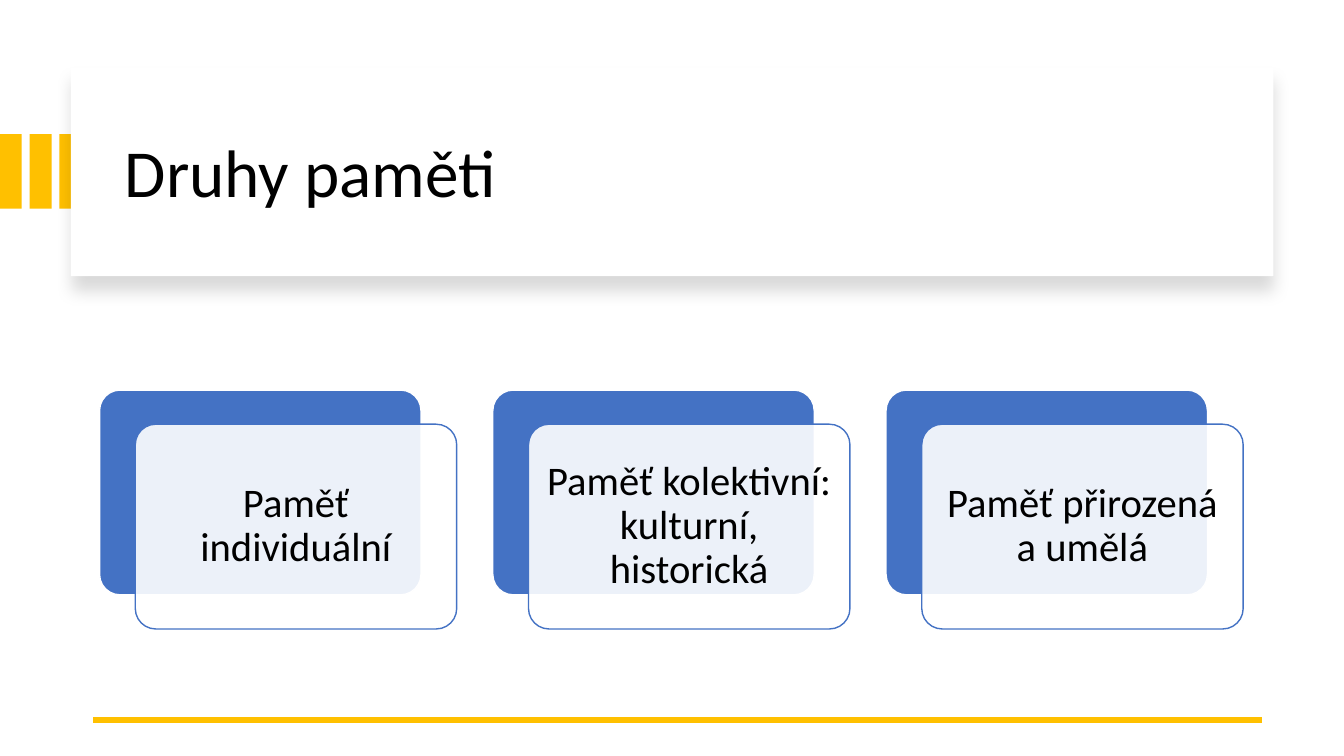
from lxml import etree
from pptx import Presentation
from pptx.dml.color import RGBColor
from pptx.enum.shapes import MSO_CONNECTOR, MSO_SHAPE
from pptx.enum.text import MSO_ANCHOR, PP_ALIGN
from pptx.oxml import parse_xml
from pptx.oxml.ns import nsdecls, qn
from pptx.util import Cm, Pt

RECTANGLE = MSO_SHAPE.RECTANGLE
ROUNDED = MSO_SHAPE.ROUNDED_RECTANGLE
STRAIGHT = MSO_CONNECTOR.STRAIGHT
MIDDLE = MSO_ANCHOR.MIDDLE
LEFT, CENTER = PP_ALIGN.LEFT, PP_ALIGN.CENTER

FONT = "Calibri"
COLORS = {"gold": "FFC000", "blue": "4472C4", "white": "FFFFFF", "black": "000000"}

TITLE = "Druhy paměti"
MEMORY_TYPES = [
    "Paměť individuální",
    "Paměť kolektivní: kulturní, historická",
    "Paměť přirozená a umělá",
]

STRIPE_PITCH = 0.75
CARD_LEFT, CARD_TOP, CARD_PITCH = 2.51, 9.83, 9.91
CARD_WIDTH, CARD_HEIGHT = 8.1, 5.16
FRONT_SHIFT_X, FRONT_SHIFT_Y = 0.9, 0.86


def color(name):
    return RGBColor.from_string(COLORS[name])


def add_block(page, kind, left, top, width, height, fill, line=None):
    block = page.shapes.add_shape(kind, Cm(left), Cm(top), Cm(width), Cm(height))
    block.shadow.inherit = False
    block.fill.solid()
    block.fill.fore_color.rgb = color(fill)
    if line:
        block.line.color.rgb = color(line)
        block.line.width = Pt(1)
    else:
        block.line.fill.background()
    if kind == ROUNDED:
        block.adjustments[0] = 0.1
    return block


def set_text(box, text, size, align):
    frame = box.text_frame
    frame.word_wrap = True
    frame.vertical_anchor = MIDDLE
    para = frame.paragraphs[0]
    para.text = text
    para.alignment = align
    para.line_spacing = 0.9
    para.font.name = FONT
    para.font.size = Pt(size)
    para.font.color.rgb = color("black")


def add_soft_shadow(block):
    effects = block._element.spPr.find(qn("a:effectLst"))
    effects.append(parse_xml(
        f'<a:outerShdw {nsdecls("a")} blurRad="{Pt(11)}" dist="{Pt(10)}" '
        f'dir="5400000" algn="t" rotWithShape="0"><a:srgbClr val="{COLORS["black"]}">'
        '<a:alpha val="15000"/></a:srgbClr></a:outerShdw>'))


def set_opacity(block, percent):
    fill_color = block._element.spPr.find(qn("a:solidFill")).find(qn("a:srgbClr"))
    etree.SubElement(fill_color, qn("a:alpha"), val=str(percent * 1000))


def add_header(page):
    for index in range(3):
        add_block(page, RECTANGLE, index * STRIPE_PITCH, 3.38, 0.55, 1.88, "gold")
    panel = add_block(page, RECTANGLE, 1.79, 1.7, 30.3, 5.26, "white")
    add_soft_shadow(panel)
    title = page.shapes.add_textbox(Cm(2.9), Cm(2.26), Cm(28.27), Cm(4.32))
    set_text(title, TITLE, 48, LEFT)


def add_rule(page):
    rule = page.shapes.add_connector(STRAIGHT, Cm(31.8), Cm(18.15), Cm(2.34), Cm(18.15))
    rule.begin_x, rule.begin_y = Cm(31.8), Cm(18.15)
    rule.line.color.rgb = color("gold")
    rule.line.width = Pt(4.5)
    etree.SubElement(rule._element.spPr, qn("a:effectLst"))


def add_card(page, left, text):
    """Draw a blue back plate and the translucent plate with text before it."""
    add_block(page, ROUNDED, left, CARD_TOP, CARD_WIDTH, CARD_HEIGHT, "blue", "white")
    front = add_block(page, ROUNDED, left + FRONT_SHIFT_X, CARD_TOP + FRONT_SHIFT_Y,
                      CARD_WIDTH, CARD_HEIGHT, "white", "blue")
    set_opacity(front, 90)
    set_text(front, text, 29, CENTER)
    frame = front.text_frame
    frame.margin_left = frame.margin_right = Cm(0.3)
    frame.margin_top = frame.margin_bottom = Cm(0.3)


def main():
    deck = Presentation()
    deck.slide_width, deck.slide_height = Cm(33.87), Cm(19.05)
    page = deck.slides.add_slide(deck.slide_layouts[6])
    add_header(page)
    add_rule(page)
    for index, text in enumerate(MEMORY_TYPES):
        add_card(page, CARD_LEFT + index * CARD_PITCH, text)
    deck.save("out.pptx")


if __name__ == "__main__":
    main()
